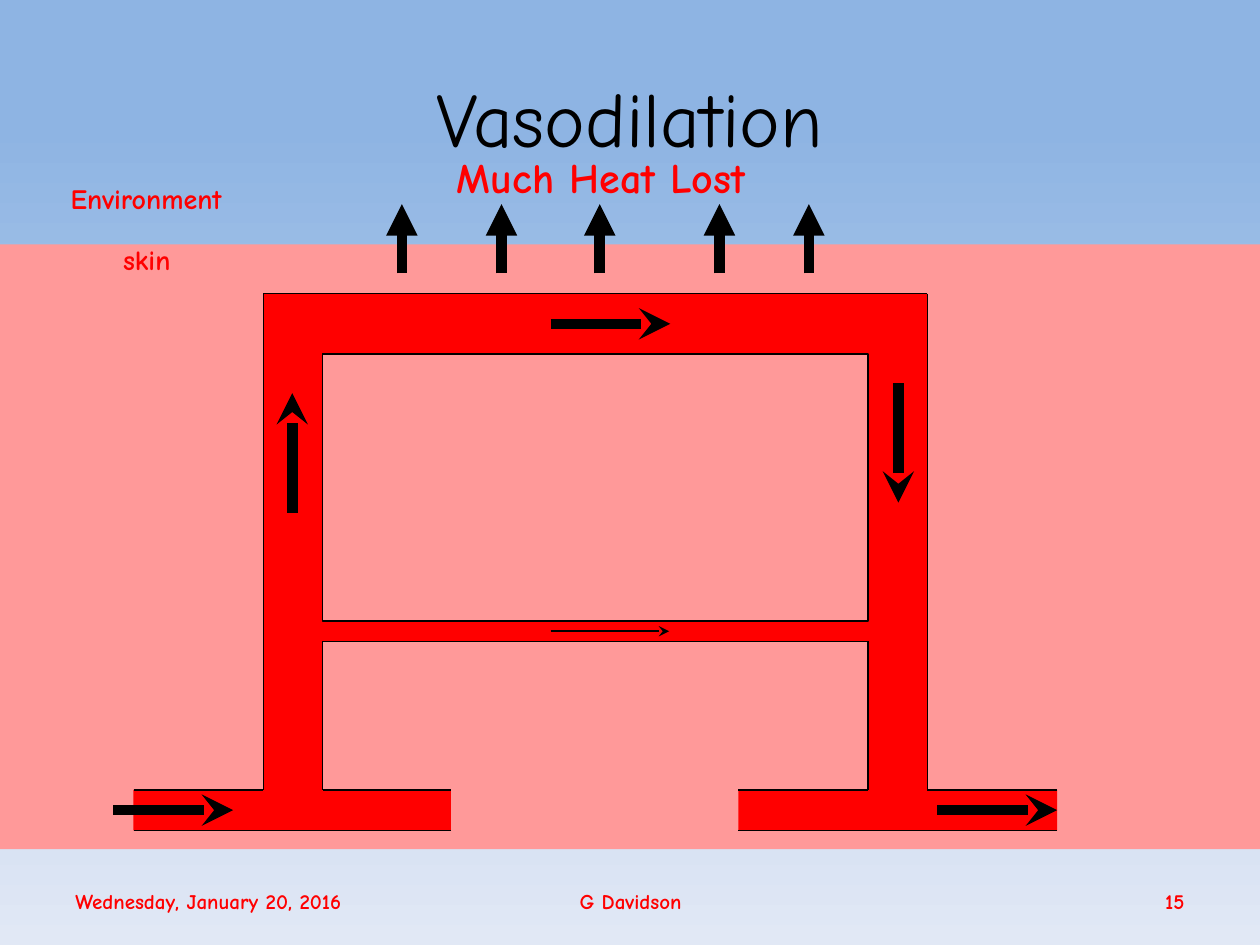
"""Build the vasodilation slide: a skin capillary loop losing heat."""
from lxml import etree
from pptx import Presentation
from pptx.dml.color import RGBColor
from pptx.enum.shapes import MSO_CONNECTOR, MSO_SHAPE
from pptx.enum.text import MSO_ANCHOR, PP_ALIGN
from pptx.oxml.ns import qn
from pptx.util import Inches, Pt

BLACK = RGBColor(0x00, 0x00, 0x00)
RED = RGBColor(0xFF, 0x00, 0x00)
SKIN = RGBColor(0xFF, 0x99, 0x99)
SKY = RGBColor(0x8E, 0xB4, 0xE3)
PALE = RGBColor(0xE1, 0xE8, 0xF5)

OUTER_LEFT, OUTER_RIGHT = 2.09, 7.36
INNER_LEFT, INNER_RIGHT = 2.56, 6.89
VESSEL_LEFT, VESSEL_RIGHT = 1.06, 8.39
GAP_LEFT, GAP_RIGHT = 3.58, 5.86
LOOP_TOP, SHUNT_BOTTOM = 2.33, 5.09
BASE_TOP, BASE_BOTTOM = 6.27, 6.59


def add_line(page, x1, y1, x2, y2, width=0.75, head=None):
    line = page.shapes.add_connector(
        MSO_CONNECTOR.STRAIGHT, Inches(x1), Inches(y1), Inches(x2), Inches(y2))
    line.line.color.rgb = BLACK
    line.line.width = Pt(width)
    if head:
        etree.SubElement(line.line._get_or_add_ln(), qn("a:tailEnd"), type=head)
    etree.SubElement(line._element.spPr, qn("a:effectLst"))


def paint(shape, color, outlined=False):
    shape.shadow.inherit = False
    shape.fill.solid()
    shape.fill.fore_color.rgb = color
    if outlined:
        shape.line.color.rgb = BLACK
        shape.line.width = Pt(0.75)
    else:
        shape.line.fill.background()


deck = Presentation()
deck.slide_width, deck.slide_height = Inches(10), Inches(7.5)
page = deck.slides.add_slide(deck.slide_layouts[6])

backdrop = page.background.fill
backdrop.gradient()
backdrop.gradient_angle = 270
for stop, color, position in zip(backdrop.gradient_stops, (SKY, PALE), (0.13, 1)):
    stop.color.rgb = color
    stop.position = position

skin = page.shapes.add_shape(
    MSO_SHAPE.RECTANGLE, Inches(0), Inches(1.94), Inches(10), Inches(4.8))
paint(skin, SKIN)

vessel_points = [
    (VESSEL_LEFT, BASE_TOP), (OUTER_LEFT, BASE_TOP), (OUTER_LEFT, LOOP_TOP),
    (OUTER_RIGHT, LOOP_TOP), (OUTER_RIGHT, BASE_TOP), (VESSEL_RIGHT, BASE_TOP),
    (VESSEL_RIGHT, BASE_BOTTOM), (VESSEL_LEFT, BASE_BOTTOM),
]
tissue_points = [
    (GAP_LEFT, BASE_TOP), (INNER_LEFT, BASE_TOP), (INNER_LEFT, SHUNT_BOTTOM),
    (INNER_RIGHT, SHUNT_BOTTOM), (INNER_RIGHT, BASE_TOP), (GAP_RIGHT, BASE_TOP),
]
for points, color in ((vessel_points, RED), (tissue_points, SKIN)):
    corners = [(Inches(x), Inches(y)) for x, y in points]
    builder = page.shapes.build_freeform(*corners[0])
    builder.add_line_segments(corners[1:], close=True)
    paint(builder.convert_to_shape(), color)

for left, top, width, height, outlined in (
    (GAP_LEFT, 6.19, GAP_RIGHT - GAP_LEFT, 0.47, False),
    (INNER_LEFT, 2.81, INNER_RIGHT - INNER_LEFT, 2.12, True),
):
    tissue = page.shapes.add_shape(
        MSO_SHAPE.RECTANGLE, Inches(left), Inches(top), Inches(width), Inches(height))
    paint(tissue, SKIN, outlined)

for x, top in (
    (OUTER_LEFT, LOOP_TOP), (OUTER_RIGHT, LOOP_TOP),
    (INNER_LEFT, SHUNT_BOTTOM), (INNER_RIGHT, SHUNT_BOTTOM),
):
    add_line(page, x, top, x, BASE_TOP)

for left, right, y in (
    (OUTER_LEFT, OUTER_RIGHT, LOOP_TOP),
    (INNER_LEFT, INNER_RIGHT, SHUNT_BOTTOM),
    (VESSEL_LEFT, OUTER_LEFT, BASE_TOP),
    (INNER_LEFT, GAP_LEFT, BASE_TOP),
    (GAP_RIGHT, INNER_RIGHT, BASE_TOP),
    (OUTER_RIGHT, VESSEL_RIGHT, BASE_TOP),
    (VESSEL_LEFT, GAP_LEFT, BASE_BOTTOM),
    (GAP_RIGHT, VESSEL_RIGHT, BASE_BOTTOM),
):
    add_line(page, left, y, right, y)

for x in (3.19, 3.98, 4.76, 5.71, 6.42):
    add_line(page, x, 2.17, x, 1.62, 6, "triangle")

for x1, y1, x2, y2, width in (
    (0.9, 6.43, 1.85, 6.43, 6),
    (2.32, 4.07, 2.32, 3.12, 6),
    (4.37, 2.57, 5.32, 2.57, 6),
    (7.13, 3.04, 7.13, 3.99, 6),
    (7.44, 6.43, 8.39, 6.43, 6),
    (4.37, 5.01, 5.31, 5.01, 1),
):
    add_line(page, x1, y1, x2, y2, width, "stealth")

LEFT, CENTER, RIGHT = PP_ALIGN.LEFT, PP_ALIGN.CENTER, PP_ALIGN.RIGHT
TOP, MIDDLE = MSO_ANCHOR.TOP, MSO_ANCHOR.MIDDLE
for text, left, top, width, height, size, color, bold, align, anchor, wrap in (
    ("Vasodilation", 0.5, 0.3, 9, 1.25, 44, BLACK, False, CENTER, MIDDLE, True),
    ("Much Heat Lost", 3.35, 1.15, 2.84, 0.5, 24, RED, True, CENTER, TOP, True),
    ("Environment", 0.42, 1.39, 1.48, 0.37, 16, RED, True, CENTER, TOP, False),
    ("skin", 0.86, 1.88, 0.61, 0.37, 16, RED, True, CENTER, TOP, False),
    ("Wednesday, January 20, 2016", 0.5, 6.95, 3.32, 0.4, 12, RED, True, LEFT, MIDDLE, True),
    ("G Davidson", 3.42, 6.95, 3.17, 0.4, 12, RED, True, CENTER, MIDDLE, True),
    ("15", 7.17, 6.95, 2.33, 0.4, 12, RED, True, RIGHT, MIDDLE, True),
):
    box = page.shapes.add_textbox(Inches(left), Inches(top), Inches(width), Inches(height))
    box.text_frame.word_wrap = wrap
    box.text_frame.vertical_anchor = anchor
    para = box.text_frame.paragraphs[0]
    para.alignment = align
    span = para.add_run()
    span.text = text
    span.font.name = "Comic Neue"
    span.font.size = Pt(size)
    span.font.bold = bold
    span.font.color.rgb = color

deck.save("out.pptx")
